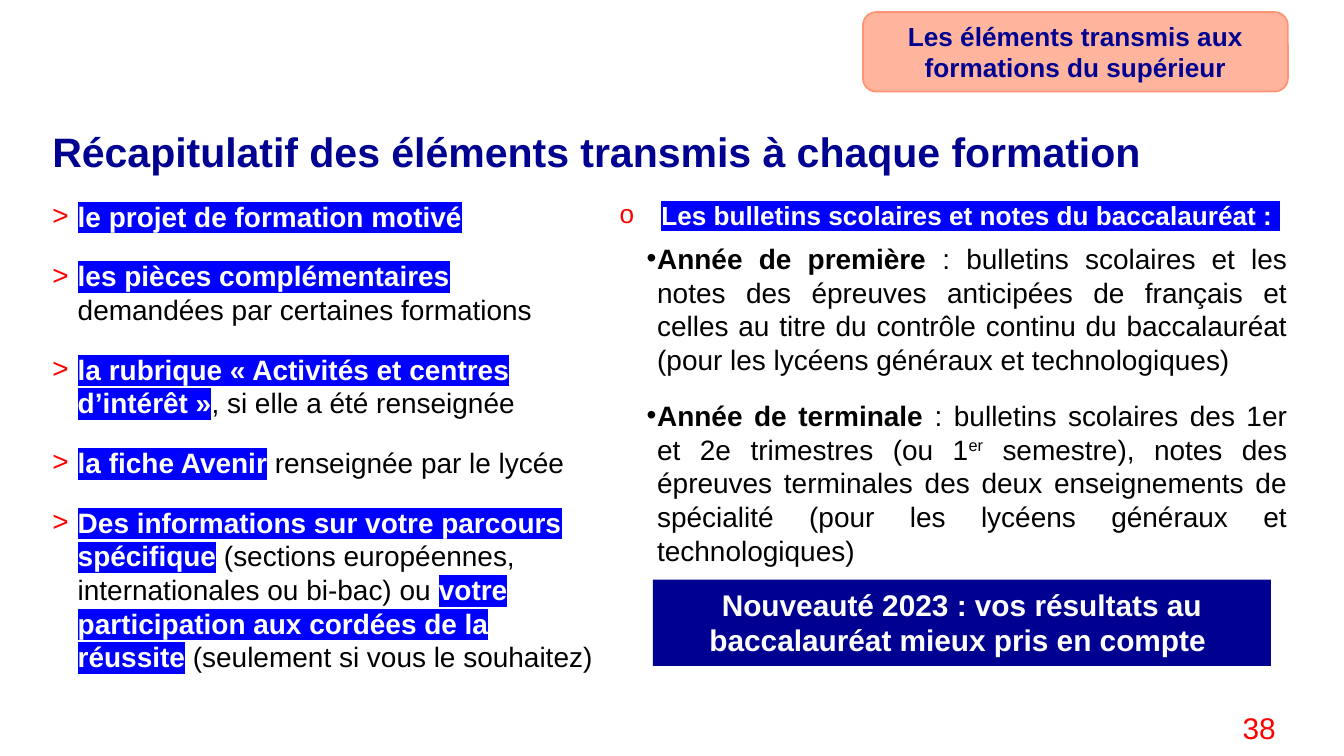
from dataclasses import dataclass

from lxml import etree
from pptx import Presentation
from pptx.dml.color import RGBColor
from pptx.enum.shapes import MSO_SHAPE
from pptx.enum.text import MSO_ANCHOR, PP_ALIGN
from pptx.oxml.ns import qn
from pptx.util import Cm, Pt

LEFT, MID, RIGHT, JUST = PP_ALIGN.LEFT, PP_ALIGN.CENTER, PP_ALIGN.RIGHT, PP_ALIGN.JUSTIFY
TOP, CENTER = MSO_ANCHOR.TOP, MSO_ANCHOR.MIDDLE
RECT, ROUND = MSO_SHAPE.RECTANGLE, MSO_SHAPE.ROUNDED_RECTANGLE


@dataclass
class Theme:
    face: str = "Arial"
    navy: str = "000091"
    blue: str = "0000FF"
    red: str = "FF0000"
    coral: str = "FF9575"
    black: str = "000000"
    white: str = "FFFFFF"
    title: int = 22
    note: int = 16
    body: int = 15
    head: int = 14


theme = Theme()


def style(run, size, color, bold=False, mark=False):
    font = run.font
    font.size, font.bold, font.name = Pt(size), bold, theme.face
    font.color.rgb = RGBColor.from_string(color)
    if mark:
        light = etree.Element(qn("a:highlight"))
        etree.SubElement(light, qn("a:srgbClr"), val=theme.blue)
        run.font._element.find(qn("a:solidFill")).addnext(light)


def bullet(para, char, color, left, hang):
    props = para._p.get_or_add_pPr()
    props.set("marL", str(Cm(left)))
    props.set("indent", str(-Cm(hang)))
    tint = etree.SubElement(props, qn("a:buClr"))
    etree.SubElement(tint, qn("a:srgbClr"), val=color)
    etree.SubElement(props, qn("a:buFont"), typeface=theme.face)
    etree.SubElement(props, qn("a:buChar"), char=char)


deck = Presentation()
deck.slide_width, deck.slide_height = Cm(25.4), Cm(14.28)
slide = deck.slides.add_slide(deck.slide_layouts[6])
shapes = slide.shapes

# Title and page number: place, text, size, colour, bold, alignment, inset
lines = [
    ((0.99, 2.49, 24.41, 1.24), "Récapitulatif des éléments transmis à chaque formation",
     theme.title, theme.navy, True, LEFT, 0),
    ((21.11, 13.28, 3.25, 0.99), "38", theme.note, theme.red, False, RIGHT, 0.25),
]
for place, text, size, color, bold, align, inset in lines:
    frame = shapes.add_textbox(*map(Cm, place)).text_frame
    frame.word_wrap = True
    frame.margin_left = frame.margin_right = Cm(inset)
    frame.margin_top = frame.margin_bottom = Cm(inset / 2)
    frame.text = text
    para = frame.paragraphs[0]
    para.alignment = align
    if size == theme.title:
        para.line_spacing = 0.9
    style(para.runs[0], size, color, bold)

# Filled boxes: kind, place, text, size, text colour, fill, anchor
boxes = [
    (RECT, (12.34, 10.95, 11.68, 1.63),
     "Nouveauté 2023 : vos résultats au baccalauréat mieux pris en compte ",
     theme.note, theme.white, theme.navy, TOP),
    (ROUND, (16.31, 0.23, 8.03, 1.5), "Les éléments transmis aux formations du supérieur",
     theme.head, theme.navy, theme.coral, CENTER),
]
for kind, place, text, size, color, fill, anchor in boxes:
    box = shapes.add_shape(kind, *map(Cm, place))
    box.shadow.inherit = False
    box.fill.solid()
    box.fill.fore_color.rgb = RGBColor.from_string(fill)
    if kind == ROUND:
        box.line.color.rgb = RGBColor.from_string(fill)
        box.line.width = Pt(1)
        tint = box._element.spPr.find(qn("a:solidFill")).find(qn("a:srgbClr"))
        etree.SubElement(tint, qn("a:alpha"), val="70000")
    else:
        box.line.fill.background()
    frame = box.text_frame
    frame.word_wrap = True
    frame.vertical_anchor = anchor
    frame.text = text
    frame.paragraphs[0].alignment = MID
    style(frame.paragraphs[0].runs[0], size, color, True)

# Left list: marked and plain parts take turns
items = [
    ["le projet de formation motivé"],
    ["les pièces complémentaires", " demandées par certaines formations"],
    ["la rubrique « Activités et centres d’intérêt »", ", si elle a été renseignée"],
    ["la fiche Avenir", " renseignée par le lycée"],
    ["Des informations sur votre parcours spécifique",
     " (sections européennes, internationales ou bi-bac) ou ",
     "votre participation aux cordées de la réussite",
     " (seulement si vous le souhaitez)"],
]
frame = shapes.add_textbox(Cm(0.99), Cm(3.76), Cm(10.31), Cm(9.91)).text_frame
frame.word_wrap = True
frame.margin_left = frame.margin_right = frame.margin_top = frame.margin_bottom = 0
for i, parts in enumerate(items):
    para = frame.add_paragraph() if i else frame.paragraphs[0]
    para.alignment = LEFT
    if i:
        para.space_before = Pt(14)
    bullet(para, ">", theme.red, 0.48, 0.48)
    for j, part in enumerate(parts):
        run = para.add_run()
        run.text = part
        mark = j % 2 == 0
        style(run, theme.body, theme.white if mark else theme.black, mark, mark)

# Right list: heading, then one paragraph a school year
years = [
    ["Année de première ",
     ": bulletins scolaires et les notes des épreuves anticipées de français et celles "
     "au titre du contrôle continu du baccalauréat (pour les lycéens généraux et "
     "technologiques)"],
    ["Année de terminale ", ": bulletins scolaires des 1er et 2e trimestres (ou 1", "er",
     " semestre), notes des épreuves terminales des deux enseignements de spécialité "
     "(pour les lycéens généraux et technologiques)"],
]
frame = shapes.add_textbox(Cm(11.71), Cm(3.76), Cm(12.62), Cm(6.93)).text_frame
frame.word_wrap = True
frame.margin_left = frame.margin_right = frame.margin_top = frame.margin_bottom = 0
frame.text = "Les bulletins scolaires et notes du baccalauréat : "
para = frame.paragraphs[0]
bullet(para, "o", theme.red, 0.79, 0.79)
style(para.runs[0], theme.head, theme.white, True, True)
for parts in years:
    para = frame.add_paragraph()
    para.alignment = JUST
    para.space_before = para.space_after = Pt(6)
    bullet(para, "•", theme.black, 0.71, 0.2)
    for j, part in enumerate(parts):
        run = para.add_run()
        run.text = part
        style(run, theme.body, theme.black, j == 0)
        if part == "er":
            run.font._element.set("baseline", "30000")

deck.save("out.pptx")
